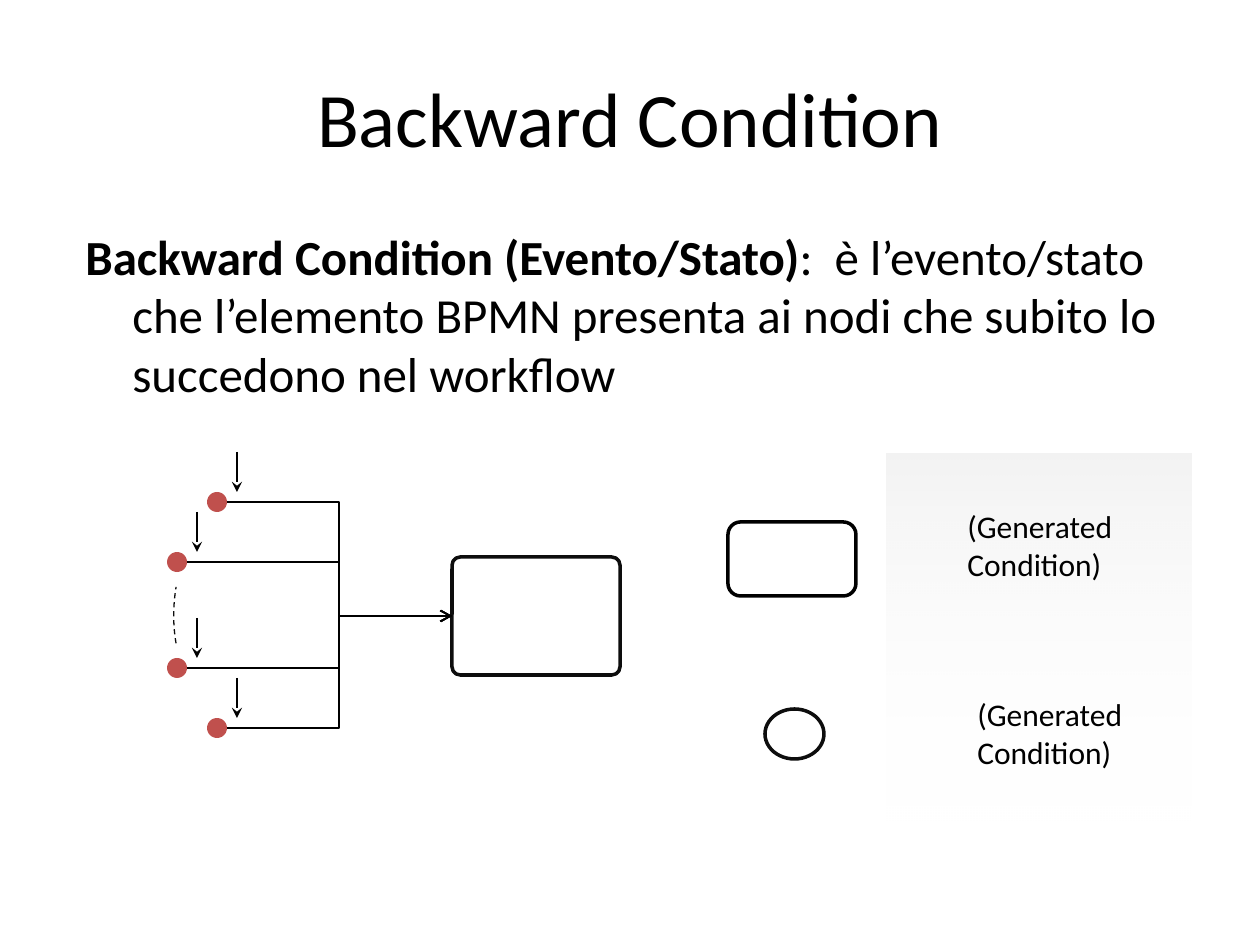
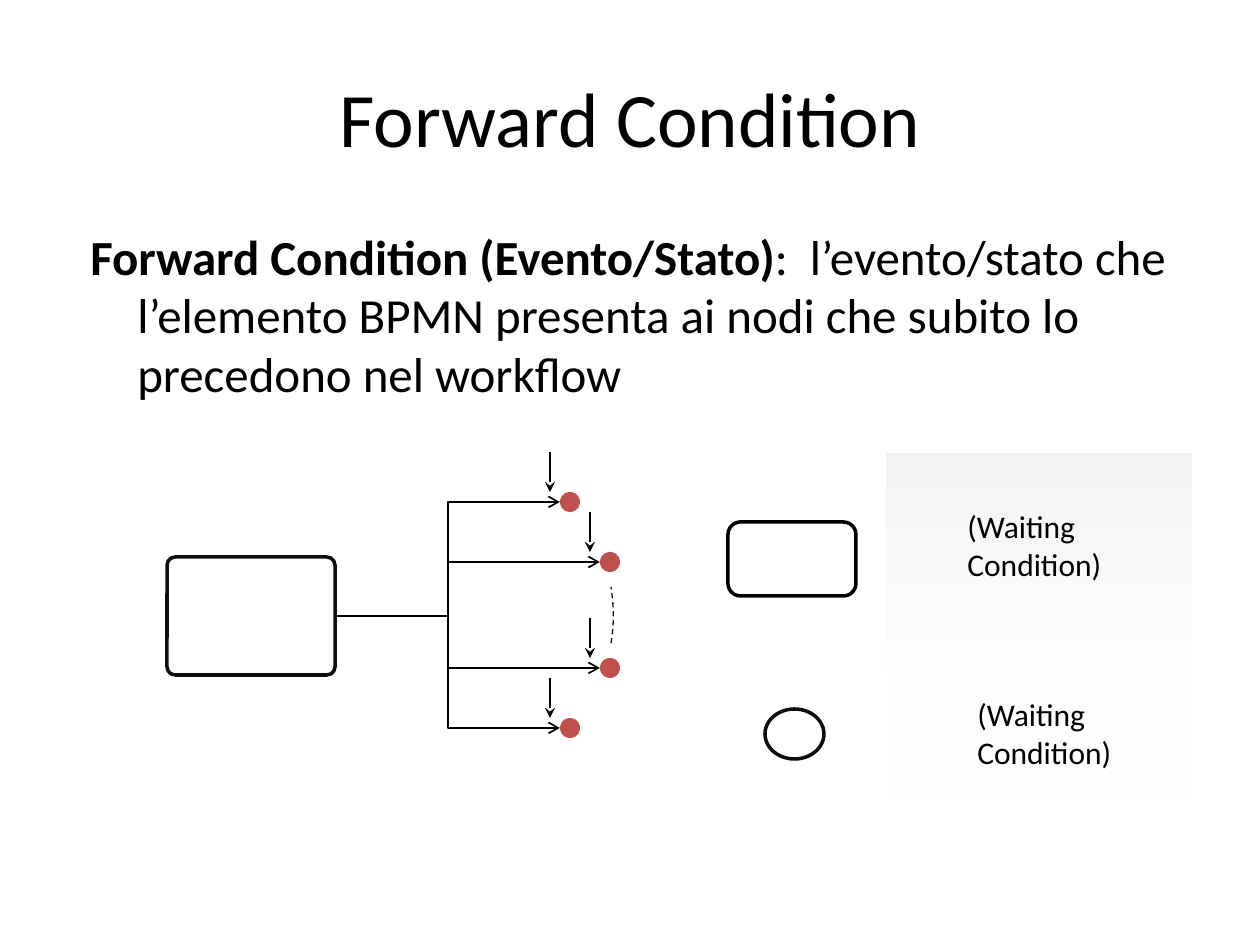
from collections import namedtuple

from lxml.etree import SubElement
from pptx import Presentation
from pptx.dml.color import RGBColor
from pptx.enum.dml import MSO_LINE
from pptx.enum.shapes import MSO_CONNECTOR as CONNECTOR, MSO_SHAPE as SHAPE
from pptx.enum.text import MSO_ANCHOR, MSO_AUTO_SIZE, PP_ALIGN
from pptx.oxml.ns import qn
from pptx.util import Emu, Pt

Box = namedtuple("Box", "left top width height")

PX_PER_INCH = 126
FONT = "Calibri"
BLACK = RGBColor(0x00, 0x00, 0x00)
NEAR_BLACK = RGBColor(0x0D, 0x0D, 0x0D)
WHITE = RGBColor(0xFF, 0xFF, 0xFF)
GRAY = RGBColor(0x80, 0x80, 0x80)
RED = RGBColor(0xC0, 0x50, 0x4D)

TITLE_BOX = Box(63, 38, 1134, 158)
DIAGRAM_BOX = Box(167, 452, 453, 286)
LEGEND_BOX = Box(728, 452, 464, 374)

DOT_SIZE = 20
DOT_OFFSETS = [(40, 40), (0, 100), (0, 206), (40, 266)]
CONDITION_ARROW_LENGTH = 40
TRUNK_X = 172


def px(value):
    return Emu(round(value * 914400 / PX_PER_INCH))


def place(box):
    return [px(value) for value in box]


def add_shape(slide, kind, box, fill=None, line=None, weight=2, adjustments=()):
    shape = slide.shapes.add_shape(kind, *place(box))
    shape.shadow.inherit = False
    for index, value in enumerate(adjustments):
        shape.adjustments[index] = value
    if fill is None:
        shape.fill.background()
    else:
        shape.fill.solid()
        shape.fill.fore_color.rgb = fill
    if line is None:
        shape.line.fill.background()
    else:
        shape.line.color.rgb = line
        shape.line.width = Pt(weight)
    return shape


def add_line(slide, kind, start, end, weight, arrow_end, arrow_type):
    connector = slide.shapes.add_connector(kind, *place(start + end))
    connector.line.color.rgb = BLACK
    connector.line.width = Pt(weight)
    properties = connector._element.spPr
    SubElement(properties.find(qn("a:ln")), qn(arrow_end), type=arrow_type)
    SubElement(properties, qn("a:effectLst"))
    return connector


def set_font(paragraph, size):
    paragraph.font.name = FONT
    paragraph.font.size = Pt(size)
    paragraph.font.color.rgb = BLACK


def add_text(slide, box):
    frame = slide.shapes.add_textbox(*place(box)).text_frame
    frame.word_wrap = True
    return frame


def add_title(slide, text):
    title = slide.shapes.title
    title.left, title.top, title.width, title.height = place(TITLE_BOX)
    frame = title.text_frame
    frame.text = text
    frame.vertical_anchor = MSO_ANCHOR.MIDDLE
    paragraph = frame.paragraphs[0]
    paragraph.alignment = PP_ALIGN.CENTER
    set_font(paragraph, 44)


def add_definition(slide, box, term, meaning):
    paragraph = add_text(slide, box).paragraphs[0]
    set_font(paragraph, 28)
    properties = paragraph._p.get_or_add_pPr()
    properties.set("marL", str(px(47)))
    properties.set("indent", str(px(-47)))
    spacing = SubElement(properties, qn("a:spcBef"))
    SubElement(spacing, qn("a:spcPct"), val="20000")
    properties.insert(0, spacing)
    term_run = paragraph.add_run()
    term_run.text = term
    term_run.font.bold = True
    paragraph.add_run().text = meaning


def add_diagram(slide, box, forward):
    def at_x(x, width=0):
        return box.left + (box.width - x - width if forward else x)

    def at(x, y, width, height):
        return Box(at_x(x, width), box.top + y, width, height)

    task = at(285, 105, 168, 118)
    add_shape(slide, SHAPE.ROUNDED_RECTANGLE, task, WHITE, NEAR_BLACK,
              adjustments=[0.07])

    arc = add_shape(slide, SHAPE.ARC, at(-23, 43, 273, 210), None, NEAR_BLACK,
                    0.75, [140.76, 158.57])
    arc.line.dash_style = MSO_LINE.DASH
    arc.rotation = 77.1 if forward else 282.9
    if forward:
        arc._element.spPr.find(qn("a:xfrm")).set("flipH", "1")

    task_joint = (at_x(285), task.top + task.height // 2)
    branch_end = "a:headEnd" if forward else "a:tailEnd"
    for x, y in DOT_OFFSETS:
        dot = at(x, y, DOT_SIZE, DOT_SIZE)
        add_shape(slide, SHAPE.OVAL, dot, RED)

        branch_x = x + DOT_SIZE
        branch = add_line(slide, CONNECTOR.ELBOW,
                          (at_x(branch_x), dot.top + DOT_SIZE // 2),
                          task_joint, 1, branch_end, "arrow")
        bend = round((TRUNK_X - branch_x) / (285 - branch_x) * 100000)
        guides = branch._element.spPr.find(qn("a:prstGeom")).get_or_add_avLst()
        SubElement(guides, qn("a:gd"), name="adj1", fmla=f"val {bend}")

        arrow_x = at_x(x + 30)
        add_line(slide, CONNECTOR.STRAIGHT,
                 (arrow_x, dot.top - CONDITION_ARROW_LENGTH),
                 (arrow_x, dot.top), 1.5, "a:tailEnd", "stealth")


def add_legend(slide, box, label):
    def at(x, y, width, height):
        return Box(box.left + x, box.top + y, width, height)

    panel = add_shape(slide, SHAPE.RECTANGLE, at(124, 36, 374, 305))
    panel.rotation = 90
    panel.fill.gradient()
    panel.fill.gradient_angle = 0
    stops = panel.fill.gradient_stops
    for stop, color, position, alpha in zip(stops, (GRAY, WHITE), (0, 1), (10000, 0)):
        stop.color.rgb = color
        stop.position = position
        SubElement(stop._gs.find(qn("a:srgbClr")), qn("a:alpha"), val=str(alpha))

    add_shape(slide, SHAPE.ROUNDED_RECTANGLE, at(0, 70, 128, 74), WHITE, BLACK,
              adjustments=[0.17])
    add_shape(slide, SHAPE.OVAL, at(37, 257, 59, 50), WHITE, NEAR_BLACK)

    for x, y in [(227, 49), (237, 237)]:
        frame = add_text(slide, at(x, y, 186, 89))
        frame.auto_size = MSO_AUTO_SIZE.SHAPE_TO_FIT_TEXT
        frame.text = label
        set_font(frame.paragraphs[0], 18)


def add_condition_slide(presentation, title, definition_box, meaning, label, forward):
    slide = presentation.slides.add_slide(presentation.slide_layouts[5])
    slide.background.fill.solid()
    slide.background.fill.fore_color.rgb = WHITE
    add_title(slide, title)
    add_definition(slide, definition_box, f"{title} (Evento/Stato)", meaning)
    add_diagram(slide, DIAGRAM_BOX, forward)
    add_legend(slide, LEGEND_BOX, label)


def main():
    presentation = Presentation()
    presentation.slide_width = px(1260)
    presentation.slide_height = px(945)
    add_condition_slide(
        presentation, "Backward Condition", Box(73, 220, 1119, 203),
        ":  è l’evento/stato che l’elemento BPMN presenta ai nodi che subito lo "
        "succedono nel workflow",
        "(Generated Condition)", forward=False)
    add_condition_slide(
        presentation, "Forward Condition", Box(78, 220, 1109, 203),
        ":  l’evento/stato che l’elemento BPMN presenta ai nodi che subito lo "
        "precedono nel workflow",
        "(Waiting Condition)", forward=True)
    presentation.save("out.pptx")


if __name__ == "__main__":
    main()
